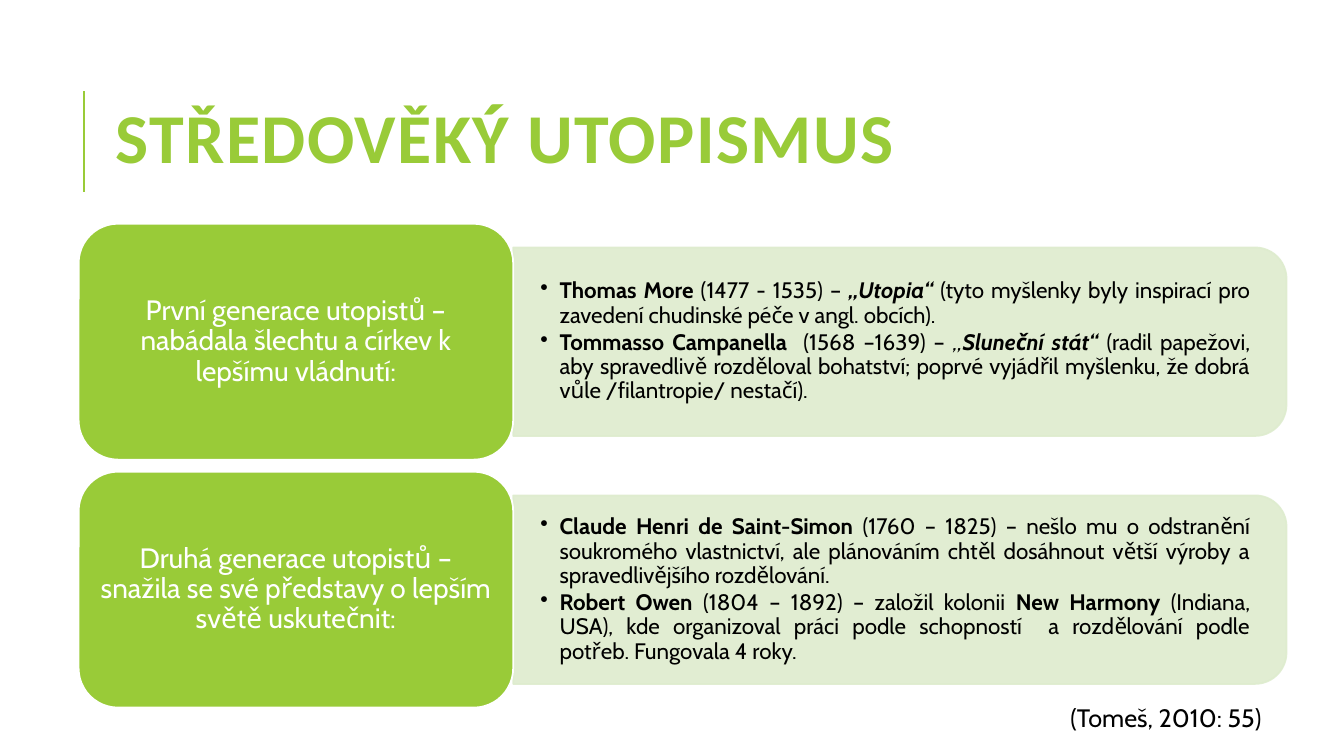
"""Slide on medieval utopianism: two generations of utopians and their thinkers."""
from lxml import etree
from pptx import Presentation
from pptx.dml.color import RGBColor
from pptx.enum import shapes, text
from pptx.oxml import ns
from pptx.util import Inches, Pt

GREEN = RGBColor(0x99, 0xCB, 0x38)
PALE = RGBColor(0xDE, 0xEC, 0xCE)
WHITE = RGBColor(0xFF, 0xFF, 0xFF)
BLACK = RGBColor(0, 0, 0)

TITLE = "STŘEDOVĚKÝ UTOPISMUS"
SOURCE = "(Tomeš, 2010: 55)"
GENERATIONS = [
    ("První generace utopistů – nabádala šlechtu a církev k lepšímu vládnutí:", [
        [("Thomas More ", "b"), ("(1477 - 1535) – ", ""), ("„Utopia“ ", "bi"),
         ("(tyto myšlenky byly inspirací pro zavedení chudinské péče v angl. obcích).", "")],
        [("Tommasso Campanella  ", "b"), ("(1568 –1639) – ", ""), ("„", "i"),
         ("Sluneční stát“ ", "bi"),
         ("(radil papežovi, aby spravedlivě rozděloval bohatství; poprvé vyjádřil "
          "myšlenku, že dobrá vůle /filantropie/ nestačí).", "")],
    ]),
    ("Druhá generace utopistů – snažila se své představy o lepším světě uskutečnit:", [
        [("Claude Henri de Saint-Simon ", "b"),
         ("(1760 – 1825) – nešlo mu o odstranění soukromého vlastnictví, ale plánováním "
          "chtěl dosáhnout větší výroby a spravedlivějšího rozdělování.", "")],
        [("Robert Owen ", "b"), ("(1804 – 1892) – založil kolonii ", ""),
         ("New Harmony ", "b"),
         ("(Indiana, USA), kde organizoval práci podle schopností  a rozdělování podle "
          "potřeb. Fungovala 4 roky.", "")],
    ]),
]

CARD_LEFT, CARD_TOP, CARD_W, CARD_H, PITCH = 0.78, 2.22, 4.31, 2.34, 2.46
PANEL_W, PANEL_H = 7.67, 1.87
TEXT_W, TEXT_H = 7.58, 1.69


def set_attrs(obj, values):
    for name, value in values.items():
        setattr(obj, name, value)


def frame(sp, inset_x=0.1, inset_y=0.05, anchor=text.MSO_ANCHOR.MIDDLE):
    tf = sp.text_frame
    x, y = Inches(inset_x), Inches(inset_y)
    set_attrs(tf, dict(word_wrap=True, vertical_anchor=anchor, margin_left=x,
                       margin_right=x, margin_top=y, margin_bottom=y))
    return tf


def add_run(p, words, size, color, name="Cabin", bold=False, italic=False):
    r = p.add_run()
    r.text = words
    set_attrs(r.font, dict(size=Pt(size), name=name, bold=bold, italic=italic))
    r.font.color.rgb = color
    return r


def add_box(s, left, top, width, height, **insets):
    sp = s.shapes.add_textbox(*map(Inches, (left, top, width, height)))
    return frame(sp, **insets)


def add_block(s, kind, left, top, width, height, fill, line):
    sp = s.shapes.add_shape(kind, *map(Inches, (left, top, width, height)))
    sp.shadow.inherit = False
    sp.fill.solid()
    sp.fill.fore_color.rgb = fill
    sp.line.color.rgb = line
    sp.line.width = Pt(1.25)
    return sp


def add_panel(s, middle, thinkers):
    left = CARD_LEFT + CARD_W
    sp = add_block(s, shapes.MSO_SHAPE.ROUND_2_SAME_RECTANGLE,
                   left + (PANEL_W - PANEL_H) / 2, middle - PANEL_W / 2,
                   PANEL_H, PANEL_W, PALE, PALE)
    sp.rotation = 90
    for clr in sp._element.spPr.iter(ns.qn("a:srgbClr")):
        etree.SubElement(clr, ns.qn("a:alpha"), val="90000")
    tf = add_box(s, left, middle - TEXT_H / 2, TEXT_W, TEXT_H, inset_x=0.27, inset_y=0.14)
    for i, runs in enumerate(thinkers):
        p = tf.add_paragraph() if i else tf.paragraphs[0]
        set_attrs(p, dict(alignment=text.PP_ALIGN.JUSTIFY, line_spacing=0.9,
                          space_after=Pt(2.4)))
        pPr = p._p.get_or_add_pPr()
        pPr.set("marL", str(Inches(0.19)))
        pPr.set("indent", str(-Inches(0.19)))
        etree.SubElement(pPr, ns.qn("a:buChar"), char="•")
        for words, style in runs:
            add_run(p, words, 16, BLACK, bold="b" in style, italic="i" in style)


def add_card(s, top, words):
    sp = add_block(s, shapes.MSO_SHAPE.ROUNDED_RECTANGLE, CARD_LEFT, top,
                   CARD_W, CARD_H, GREEN, WHITE)
    p = frame(sp, 0.08, 0.04).paragraphs[0]
    set_attrs(p, dict(alignment=text.PP_ALIGN.CENTER, line_spacing=0.9))
    add_run(p, words, 20, WHITE)


def main():
    prs = Presentation()
    set_attrs(prs, dict(slide_width=Inches(13.33), slide_height=Inches(7.5)))
    s = prs.slides.add_slide(prs.slide_layouts[6])

    rule = s.shapes.add_connector(shapes.MSO_CONNECTOR.STRAIGHT, Inches(0.83),
                                  Inches(1.9), Inches(0.83), Inches(0.9))
    rule.line.color.rgb = GREEN
    rule.line.width = Pt(1.5)
    etree.SubElement(rule._element.spPr, ns.qn("a:effectLst"))

    p = add_box(s, 1.05, 1.08, 9.13, 0.69).paragraphs[0]
    p.line_spacing = 0.8
    r = add_run(p, TITLE, 50, GREEN, "Calibri", bold=True)
    r._r.get_or_add_rPr().set("spc", "100")

    for i, (summary, thinkers) in enumerate(GENERATIONS):
        top = CARD_TOP + i * PITCH
        add_panel(s, top + CARD_H / 2, thinkers)
        add_card(s, top, summary)

    p = add_box(s, 9.7, 6.92, 2.91, 0.4, anchor=text.MSO_ANCHOR.TOP).paragraphs[0]
    p.alignment = text.PP_ALIGN.RIGHT
    add_run(p, SOURCE, 18, BLACK)
    prs.save("out.pptx")


if __name__ == "__main__":
    main()
